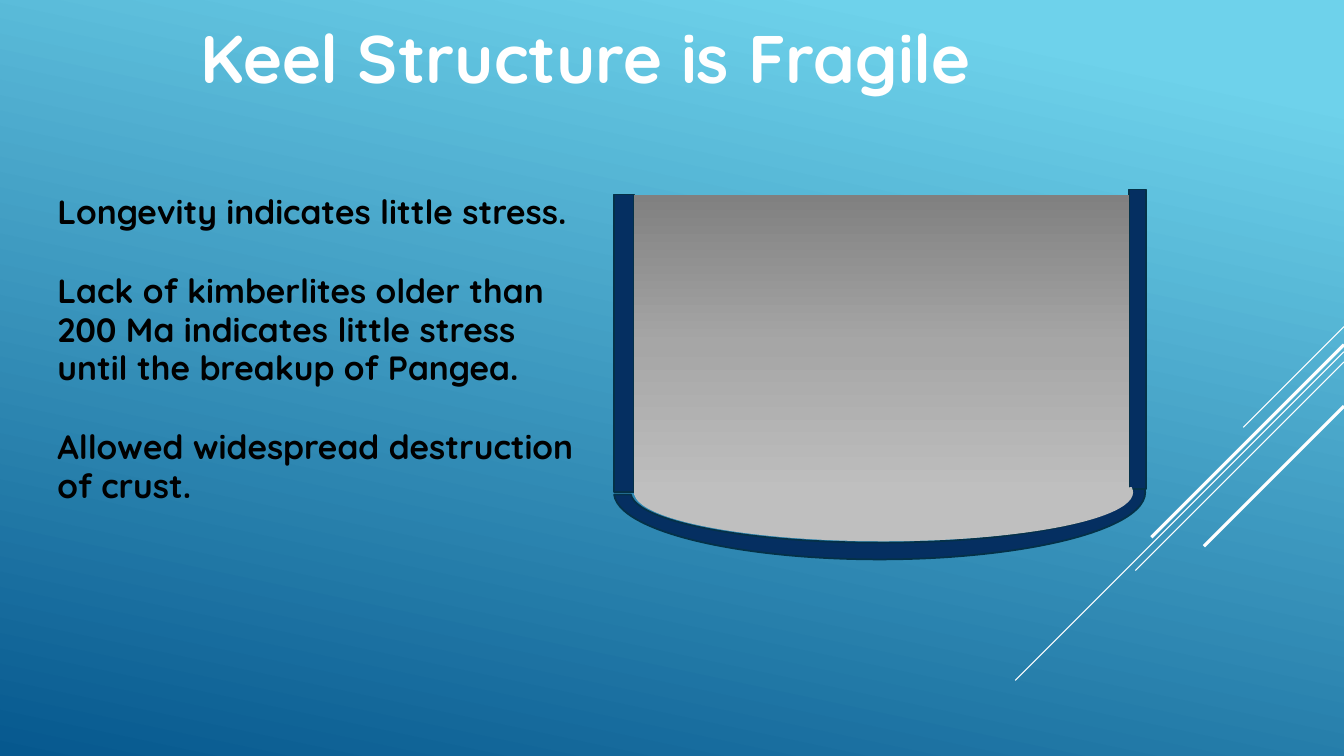
import copy
from dataclasses import dataclass

import pptx
import pptx.dml.color
import pptx.enum.shapes
import pptx.enum.text
import pptx.oxml
import pptx.util
from pptx.enum.shapes import MSO_SHAPE

# Content
TITLE = "Keel Structure is Fragile"
POINTS = [
    "Longevity indicates little stress.",
    "Lack of kimberlites older than 200 Ma indicates little stress until the breakup of Pangea.",
    "Allowed widespread destruction of crust.",
]


@dataclass(frozen=True)
class Theme:
    font: str = "Quicksand"
    title_size: float = 48
    body_size: float = 24
    body_spacing: float = 0.96
    point_gap: float = 28.8
    title_color: str = "FFFFFF"
    body_color: str = "000000"
    streak: str = "FFFFFF"
    wall: str = "052F61"
    wall_line: str = "043148"
    wall_line_width: float = 1.25
    keel_base: str = "BFBFBF"
    keel: tuple = ((0, "808080"), (50, "A6A6A6"), (100, "BFBFBF"))
    sky: tuple = ((10, "6ED2EB"), (100, "06588E"))


THEME = Theme()
WIDTH = pptx.util.Inches(13.333)
HEIGHT = pptx.util.Inches(7.5)

# Boxes: left, top, width, height in percent of the slide
TITLE_BOX = (14.18, 1.47, 74.4, 12.13)
POINTS_BOX = (3.53, 24.93, 40.88, 49.87)

# Keel parts, back to front: shape, box, arc start and end in degrees, is a wall
KEEL_PARTS = [
    (MSO_SHAPE.BLOCK_ARC, (45.68, 56.27, 39.53, 17.73), (358.94, 179.52), True),
    (MSO_SHAPE.RECTANGLE, (45.68, 25.73, 1.5, 39.33), (), True),
    (MSO_SHAPE.RECTANGLE, (84, 25.07, 1.28, 39.6), (), True),
    (MSO_SHAPE.ARC, (47.18, 58.67, 37.13, 12.93), (358.8, 180.1), False),
    (MSO_SHAPE.RECTANGLE, (47.18, 25.73, 36.83, 39.73), (), False),
]
BAND_THICKNESS = 0.125

# Diagonal streaks: start on the right edge, drop (percent of height), weight
STREAKS = [
    (43.2, 13.33, 0.75),
    (46.53, 43.47, 0.75),
    (47.87, 27.6, 0.75),
    (45.6, 25.47, 2.25),
    (53.73, 18.53, 2.25),
]


def color(value):
    return pptx.dml.color.RGBColor.from_string(value)


def place(box):
    return [round(share * side / 100) for share, side in zip(box, (WIDTH, HEIGHT) * 2)]


def fill_gradient(fill, stops, clockwise):
    fill.gradient()
    fill.gradient_angle = 360 - clockwise
    stop_list = fill.gradient_stops[0]._gs.getparent()
    while len(stop_list) < len(stops):
        stop_list.append(copy.deepcopy(stop_list[0]))
    for stop, (position, value) in zip(fill.gradient_stops, stops):
        stop.position = position / 100
        stop.color.rgb = color(value)


def add_text(slide, box, texts, size, value, spacing=1.0, gap=0):
    frame = slide.shapes.add_textbox(*place(box)).text_frame
    frame.word_wrap = True
    frame.auto_size = pptx.enum.text.MSO_AUTO_SIZE.SHAPE_TO_FIT_TEXT
    for index, text in enumerate(texts):
        paragraph = frame.add_paragraph() if index else frame.paragraphs[0]
        paragraph.line_spacing = spacing
        paragraph.space_before = pptx.util.Pt(gap if index else 0)
        run = paragraph.add_run()
        run.text = text
        run.font.name = THEME.font
        run.font.size = pptx.util.Pt(size)
        run.font.bold = True
        run.font.color.rgb = color(value)


def add_streak(slide, start, drop, weight):
    top, fall = round(HEIGHT * start / 100), round(HEIGHT * drop / 100)
    streak = slide.shapes.add_connector(
        pptx.enum.shapes.MSO_CONNECTOR.STRAIGHT, WIDTH, top, WIDTH - fall, top + fall)
    streak.line.color.rgb = color(THEME.streak)
    streak.line.width = pptx.util.Pt(weight)
    streak._element.spPr.append(pptx.oxml.parse_xml(
        '<a:effectLst xmlns:a="http://schemas.openxmlformats.org/drawingml/2006/main"/>'))


def add_keel_part(slide, kind, box, angles, is_wall):
    shape = slide.shapes.add_shape(kind, *place(box))
    shape.shadow.inherit = False
    # An adjustment of 0.6 equals one degree
    for index, angle in enumerate(angles):
        shape.adjustments[index] = angle * 0.6
    if kind == MSO_SHAPE.BLOCK_ARC:
        shape.adjustments[2] = BAND_THICKNESS
    if is_wall:
        shape.fill.solid()
        shape.fill.fore_color.rgb = color(THEME.wall)
        shape.line.color.rgb = color(THEME.wall_line)
        shape.line.width = pptx.util.Pt(THEME.wall_line_width)
        return
    shape.line.fill.background()
    if kind == MSO_SHAPE.ARC:
        shape.fill.solid()
        shape.fill.fore_color.rgb = color(THEME.keel_base)
    else:
        fill_gradient(shape.fill, THEME.keel, 90)


def main():
    presentation = pptx.Presentation()
    presentation.slide_width, presentation.slide_height = WIDTH, HEIGHT
    slide = presentation.slides.add_slide(presentation.slide_layouts[6])

    # Backdrop
    fill_gradient(slide.background.fill, THEME.sky, 102)
    for streak in STREAKS:
        add_streak(slide, *streak)

    # Text
    add_text(slide, TITLE_BOX, [TITLE], THEME.title_size, THEME.title_color)
    add_text(slide, POINTS_BOX, POINTS, THEME.body_size, THEME.body_color,
             THEME.body_spacing, THEME.point_gap)

    # Keel diagram
    for part in KEEL_PARTS:
        add_keel_part(slide, *part)

    presentation.save("out.pptx")


if __name__ == "__main__":
    main()
